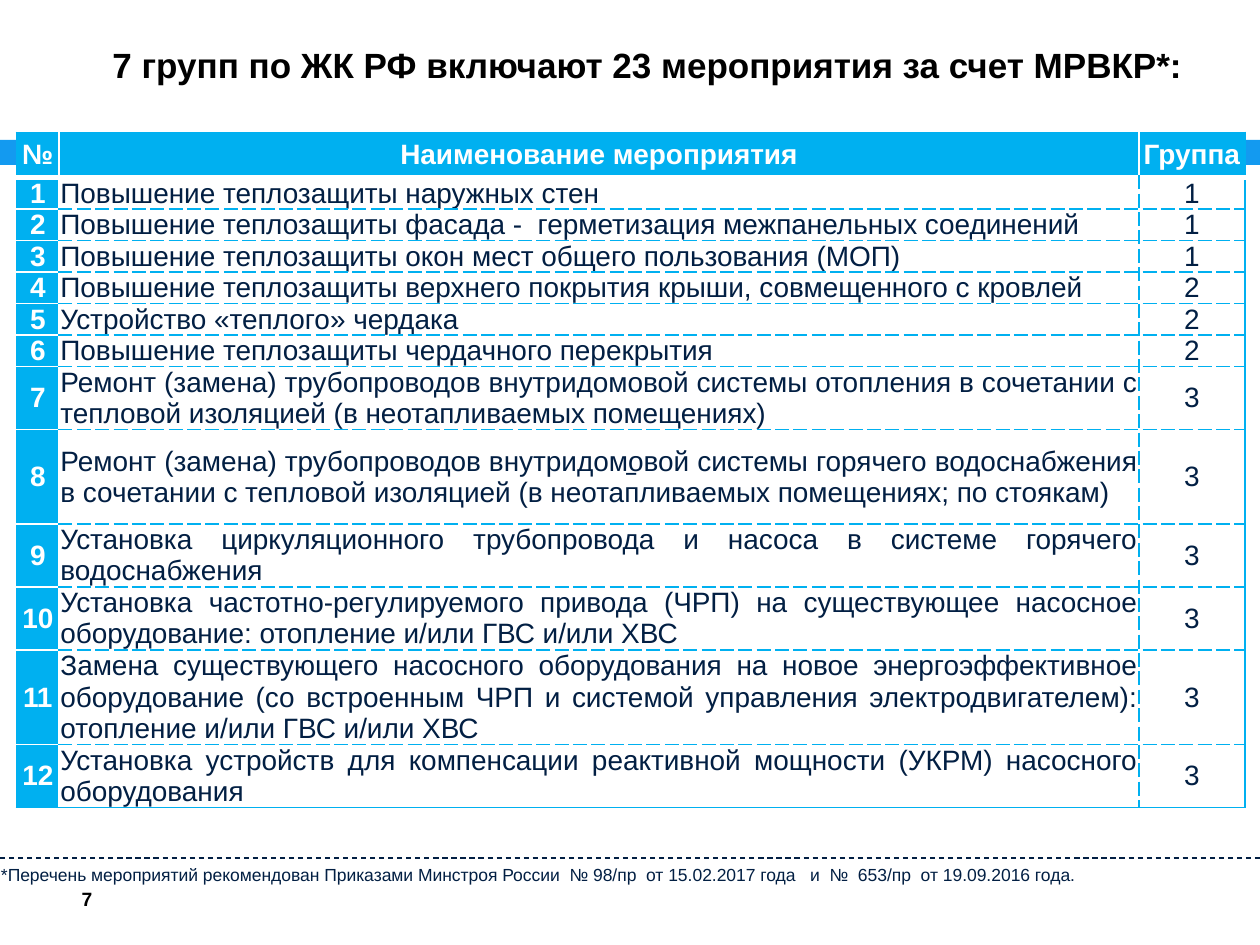
from lxml import etree
from pptx import Presentation
from pptx.dml.color import RGBColor
from pptx.enum.dml import MSO_LINE
from pptx.enum.shapes import MSO_CONNECTOR, MSO_SHAPE
from pptx.enum.text import MSO_ANCHOR, PP_ALIGN
from pptx.oxml.ns import qn
from pptx.util import Inches, Pt

CENTER, JUSTIFY, LEFT = PP_ALIGN.CENTER, PP_ALIGN.JUSTIFY, PP_ALIGN.LEFT
MIDDLE, TOP = MSO_ANCHOR.MIDDLE, MSO_ANCHOR.TOP
CYAN, NAVY, WHITE, BLACK = "00B0F0", "021F43", "FFFFFF", "000000"


def color(value):
    return RGBColor.from_string(value)


def format_text(text_frame, size, font_color, bold=False, align=LEFT, font="Arial"):
    paragraph = text_frame.paragraphs[0]
    paragraph.alignment = align
    for run in paragraph.runs:
        run.font.name = font
        run.font.size = Pt(size)
        run.font.bold = bold
        run.font.color.rgb = color(font_color)


presentation = Presentation()
presentation.slide_width = Inches(10)
presentation.slide_height = Inches(7.5)
slide = presentation.slides.add_slide(presentation.slide_layouts[6])

# Blue band behind the table header
band = slide.shapes.add_shape(
    MSO_SHAPE.RECTANGLE, Inches(0), Inches(1.11), Inches(10), Inches(0.2))
band.shadow.inherit = False
band.fill.solid()
band.fill.fore_color.rgb = color("139AF0")
band.line.fill.background()

# Table of measures: name, group, row height
measures = [
    ("Повышение теплозащиты наружных стен", 1, 0.25),
    ("Повышение теплозащиты фасада -  герметизация межпанельных соединений", 1, 0.25),
    ("Повышение теплозащиты окон мест общего пользования (МОП)", 1, 0.25),
    ("Повышение теплозащиты верхнего покрытия крыши, совмещенного с кровлей", 2, 0.25),
    ("Устройство «теплого» чердака", 2, 0.25),
    ("Повышение теплозащиты чердачного перекрытия", 2, 0.25),
    ("Ремонт (замена) трубопроводов внутридомовой системы отопления в сочетании "
     "с тепловой изоляцией (в неотапливаемых помещениях)", 3, 0.5),
    ("Ремонт (замена) трубопроводов внутридомовой системы горячего водоснабжения "
     "в сочетании с тепловой изоляцией (в неотапливаемых помещениях; по стоякам)", 3, 0.75),
    ("Установка циркуляционного трубопровода и насоса в системе горячего "
     "водоснабжения", 3, 0.5),
    ("Установка частотно-регулируемого привода (ЧРП) на существующее насосное "
     "оборудование: отопление и/или ГВС и/или ХВС", 3, 0.5),
    ("Замена существующего насосного оборудования на новое энергоэффективное "
     "оборудование (со встроенным ЧРП и системой управления электродвигателем): "
     "отопление и/или ГВС и/или ХВС", 3, 0.75),
    ("Установка устройств для компенсации реактивной мощности (УКРМ) насосного "
     "оборудования", 3, 0.5),
]
rows = [("№", "Наименование мероприятия", "Группа", 0.36)]
rows += [(str(number), name, str(group), height)
         for number, (name, group, height) in enumerate(measures, 1)]
last_row = len(rows) - 1

table = slide.shapes.add_table(
    len(rows), 3, Inches(0.13), Inches(1.05), Inches(9.75), Inches(5.36)).table
table.horz_banding = False
for column, width in zip(table.columns, (0.34, 8.57, 0.84)):
    column.width = Inches(width)

# Border kinds: colour, width in points, dash
solid_cyan, dashed_cyan = (CYAN, 1, "solid"), (CYAN, 1, "sysDash")
thin_white, thick_white = (WHITE, 1, "solid"), (WHITE, 3, "solid")

for row_index, (*texts, height) in enumerate(rows):
    table.rows[row_index].height = Inches(height)
    for column_index, text in enumerate(texts):
        cell = table.cell(row_index, column_index)
        is_header, is_number = row_index == 0, column_index == 0
        is_filled = is_header or is_number
        cell.margin_left = cell.margin_right = Inches(0.01)
        cell.margin_top = cell.margin_bottom = 0
        cell.vertical_anchor = MIDDLE
        cell.text_frame.text = text
        align = JUSTIFY if column_index == 1 and not is_header else CENTER
        format_text(cell.text_frame, 16, WHITE if is_filled else NAVY, is_filled, align)

        # Borders follow the cell's place in the grid
        inner = thin_white if is_filled else dashed_cyan
        left = solid_cyan if is_number else thin_white if column_index == 1 else inner
        right = solid_cyan if column_index == 2 else inner
        top = solid_cyan if is_header else thick_white if row_index == 1 else inner
        bottom = (thick_white if is_header
                  else solid_cyan if row_index == last_row else inner)
        properties = cell._tc.get_or_add_tcPr()
        for tag, (line_color, width, dash) in zip(
                ("a:lnL", "a:lnR", "a:lnT", "a:lnB"), (left, right, top, bottom)):
            line = etree.SubElement(properties, qn(tag), w=str(Pt(width)))
            line_fill = etree.SubElement(line, qn("a:solidFill"))
            etree.SubElement(line_fill, qn("a:srgbClr"), val=line_color)
            etree.SubElement(line, qn("a:prstDash"), val=dash)

        if is_filled:
            cell.fill.solid()
            cell.fill.fore_color.rgb = color(CYAN)
        else:
            cell.fill.background()

# Title, footnote, loose dash and slide number
footnote = ("*Перечень мероприятий рекомендован Приказами Минстроя России  № 98/пр  от "
            "15.02.2017 года   и  №  653/пр  от 19.09.2016 года.")
labels = [
    ("7 групп по ЖК РФ включают 23 мероприятия за счет МРВКР*:",
     (0.04, 0.3, 10.2, 0.44), 20, BLACK, True, CENTER, "Arial"),
    (footnote, (-0.09, 6.81, 9.07, 0.27), 10, NAVY, False, LEFT, "Arial"),
    ("–", (4.86, 3.56, 0.28, 0.37), 16, NAVY, False, LEFT, "Karla"),
    ("7", (0.39, 6.94, 0.6, 0.39), 11, BLACK, True, CENTER, "Arial"),
]
for text, place, size, font_color, bold, align, font in labels:
    text_frame = slide.shapes.add_textbox(*map(Inches, place)).text_frame
    text_frame.word_wrap = text != "–"
    text_frame.text = text
    format_text(text_frame, size, font_color, bold, align, font)

# The slide number, last in the list, sits centred without margins
text_frame.vertical_anchor = MIDDLE
text_frame.margin_left = text_frame.margin_right = 0
text_frame.margin_top = text_frame.margin_bottom = 0

# Dashed rule above the footnote
rule = slide.shapes.add_connector(
    MSO_CONNECTOR.STRAIGHT, Inches(0), Inches(6.81), Inches(10), Inches(6.81))
rule.line.color.rgb = color(NAVY)
rule.line.width = Pt(0.75)
rule.line.dash_style = MSO_LINE.DASH
etree.SubElement(rule._element.spPr, qn("a:effectLst"))

presentation.save("out.pptx")
